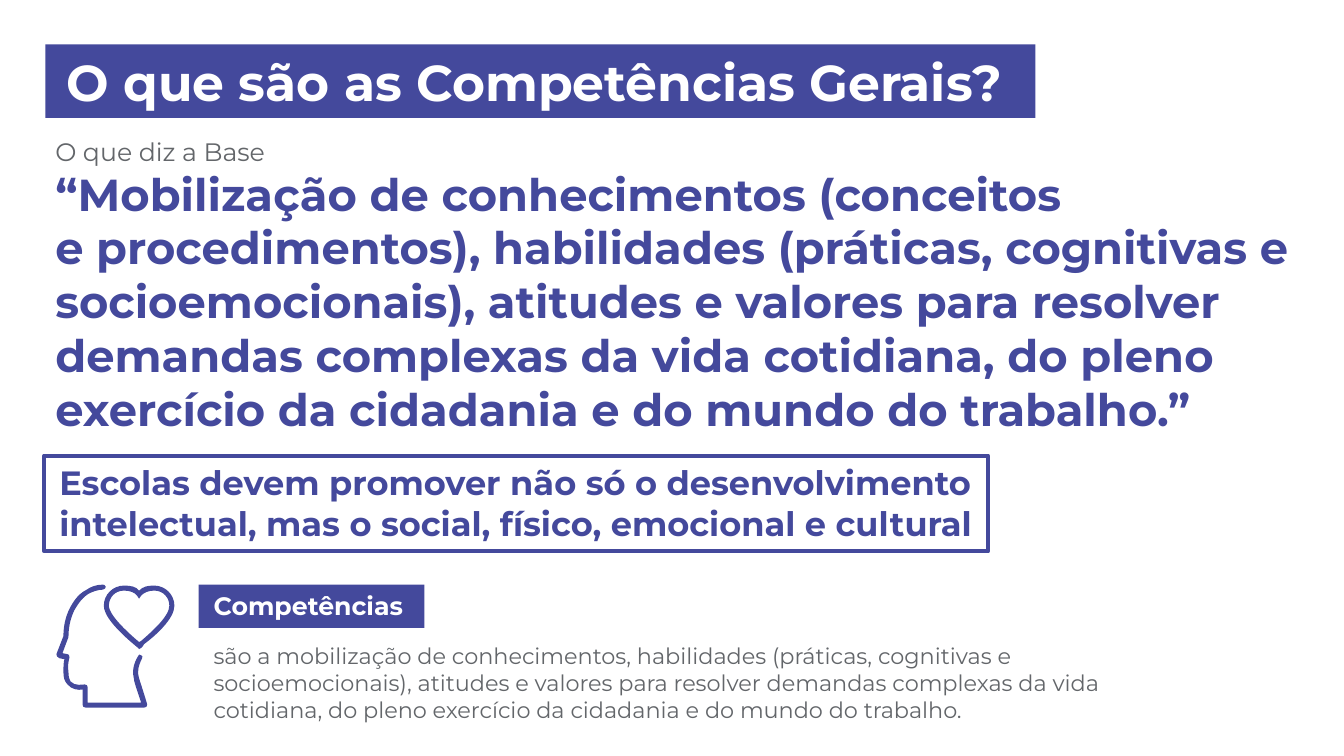
from dataclasses import dataclass

from lxml import etree
from pptx import Presentation
from pptx.dml.color import RGBColor
from pptx.enum.shapes import MSO_SHAPE
from pptx.enum.text import MSO_ANCHOR, MSO_AUTO_SIZE, PP_ALIGN
from pptx.oxml.ns import qn
from pptx.util import Pt

RECTANGLE = MSO_SHAPE.RECTANGLE
TOP, MIDDLE = MSO_ANCHOR.TOP, MSO_ANCHOR.MIDDLE
NO_AUTOFIT = MSO_AUTO_SIZE.NONE
LEFT = PP_ALIGN.LEFT

SCALE = 9144  # EMU in one px, 100 px to the inch
FONT = "Montserrat"
COLORS = {"indigo": "44499C", "gray": "63666A", "white": "FFFFFF"}


@dataclass
class Plate:
    """A rectangle, either filled or only outlined."""
    at: tuple[int, int, int, int]
    outline: int = 0


@dataclass
class Label:
    at: tuple[int, int, int, int]
    text: str
    size: int
    color: str
    bold: bool = False
    anchor: MSO_ANCHOR = TOP


PLATES = [
    Plate((45, 44, 982, 73)),
    Plate((44, 452, 936, 95), outline=3),
    Plate((197, 580, 224, 43)),
]

TITLE = Label((56, 45, 1042, 71), "O que são as Competências Gerais?",
              36, "white", True, MIDDLE)

LABELS = [
    Label((45, 160, 1244, 279),
          "“Mobilização de conhecimentos (conceitos\n"
          "e procedimentos), habilidades (práticas, cognitivas e "
          "socioemocionais), atitudes e valores para resolver demandas "
          "complexas da vida cotidiana, do pleno exercício da cidadania "
          "e do mundo do trabalho.”", 32, "indigo", True),
    Label((45, 130, 320, 40), "O que diz a Base", 18, "gray"),
    Label((49, 453, 932, 91),
          "Escolas devem promover não só o desenvolvimento intelectual, "
          "mas o social, físico, emocional e cultural",
          24, "indigo", True, MIDDLE),
    Label((202, 581, 236, 40), "Competências", 18, "white", True, MIDDLE),
    Label((202, 632, 960, 101),
          "são a mobilização de conhecimentos, habilidades (práticas, "
          "cognitivas e socioemocionais), atitudes e valores para resolver "
          "demandas complexas da vida cotidiana, do pleno exercício da "
          "cidadania e do mundo do trabalho.", 16, "gray"),
]

# Icon contours: two numbers are a straight step, six a cubic curve
HEAD = [
    (138, 673), (136, 667, 137, 661, 141, 653), (142, 652, 141, 650, 140, 650),
    (139, 649, 137, 649, 137, 651), (132, 659, 131, 667, 133, 674),
    (133, 677, 138, 690, 140, 697), (87, 697), (87, 682),
    (87, 680, 86, 679, 84, 679), (83, 679, 74, 681, 70, 676),
    (69, 674, 68, 672, 68, 667), (67, 661, 68, 656, 69, 652),
    (69, 650, 68, 649, 67, 649), (62, 648), (68, 632),
    (68, 625, 69, 615, 74, 605), (76, 602, 80, 594, 88, 589),
    (92, 587, 97, 585, 102, 585), (104, 585, 105, 583, 105, 582),
    (104, 580, 103, 580, 102, 580), (96, 580, 90, 582, 86, 585),
    (76, 590, 72, 599, 70, 602), (64, 613, 63, 624, 63, 631), (56, 649),
    (56, 651, 57, 652, 59, 653), (64, 654), (63, 657, 63, 662, 63, 667),
    (63, 672, 64, 676, 67, 679), (71, 684, 78, 685, 82, 684), (82, 699),
    (82, 701, 83, 702, 85, 702), (143, 702),
    (145, 702, 146, 701, 146, 699), (146, 698, 139, 676, 138, 673),
]
HEART_OUTER = [
    (153, 581), (146, 581, 142, 582, 138, 586), (135, 582, 130, 581, 123, 581),
    (112, 581, 103, 590, 103, 601), (103, 610, 114, 624, 136, 642),
    (138, 644), (140, 643), (141, 642, 142, 641, 143, 639),
    (154, 631, 173, 614, 173, 601), (173, 590, 164, 581, 153, 581),
]
HEART_INNER = [
    (140, 636), (138, 637), (112, 615, 108, 605, 108, 601),
    (108, 593, 114, 586, 123, 586), (129, 586, 134, 588, 136, 591),
    (138, 594), (140, 591), (143, 588, 147, 586, 153, 586),
    (162, 586, 168, 593, 168, 601), (168, 612, 149, 628, 140, 636),
]
ICON = [[HEAD], [HEART_OUTER, HEART_INNER]]


def px(length: int) -> int:
    return length * SCALE


def rgb(name: str) -> RGBColor:
    return RGBColor.from_string(COLORS[name])


def paint(shape, outline: int = 0) -> None:
    shape.shadow.inherit = False
    if outline:
        shape.fill.background()
        shape.line.color.rgb = rgb("indigo")
        shape.line.width = Pt(outline)
    else:
        shape.fill.solid()
        shape.fill.fore_color.rgb = rgb("indigo")
        shape.line.fill.background()


def write(box, label: Label) -> None:
    frame = box.text_frame
    frame_format = {
        "word_wrap": True, "auto_size": NO_AUTOFIT,
        "vertical_anchor": label.anchor,
        "margin_left": px(10), "margin_right": px(10),
        "margin_top": px(5), "margin_bottom": px(5),
    }
    for name, value in frame_format.items():
        setattr(frame, name, value)
    para = frame.paragraphs[0]
    para.text = label.text
    para.alignment = LEFT
    font_format = {"name": FONT, "size": Pt(label.size), "bold": label.bold}
    for span in para.runs:
        for name, value in font_format.items():
            setattr(span.font, name, value)
        span.font.color.rgb = rgb(label.color)


def bend(shape, steps: list[tuple]) -> None:
    """Turn the straight segments of six-number steps into cubic curves."""
    segments = list(shape.element.iter(qn("a:lnTo")))
    for segment, step in zip(segments, steps):
        if len(step) == 2:
            continue
        curve = etree.Element(qn("a:cubicBezTo"))
        for x, y in zip(step[::2], step[1::2]):
            etree.SubElement(curve, qn("a:pt"), x=str(px(x) - shape.left),
                             y=str(px(y) - shape.top))
        segment.getparent().replace(segment, curve)


def draw_outline(page, contours: list[list[tuple]]) -> None:
    builder = page.shapes.build_freeform(*contours[0][0], scale=SCALE)
    for number, contour in enumerate(contours):
        if number:
            builder.move_to(*contour[0])
        builder.add_line_segments([step[-2:] for step in contour[1:]])
    shape = builder.convert_to_shape()
    # Local units become EMU so that control points share the page scale
    for outline in shape.element.iter(qn("a:path")):
        outline.set("w", str(shape.width))
        outline.set("h", str(shape.height))
        for point in outline.iter(qn("a:pt")):
            for axis in ("x", "y"):
                point.set(axis, str(px(int(point.get(axis)))))
    bend(shape, [step for contour in contours for step in contour[1:]])
    paint(shape)


def main() -> None:
    deck = Presentation()
    deck.slide_width, deck.slide_height = px(1333), px(750)
    page = deck.slides.add_slide(deck.slide_layouts[5])

    # Plates behind the text
    for plate in PLATES:
        paint(page.shapes.add_shape(RECTANGLE, *map(px, plate.at)),
              plate.outline)

    # Title, brought in front of its plate
    title = page.shapes.title
    title.left, title.top, title.width, title.height = map(px, TITLE.at)
    write(title, TITLE)
    title.element.getparent().append(title.element)

    # Texts
    for label in LABELS:
        write(page.shapes.add_textbox(*map(px, label.at)), label)

    # Head and heart icon
    for contours in ICON:
        draw_outline(page, contours)

    deck.save("out.pptx")


if __name__ == "__main__":
    main()
